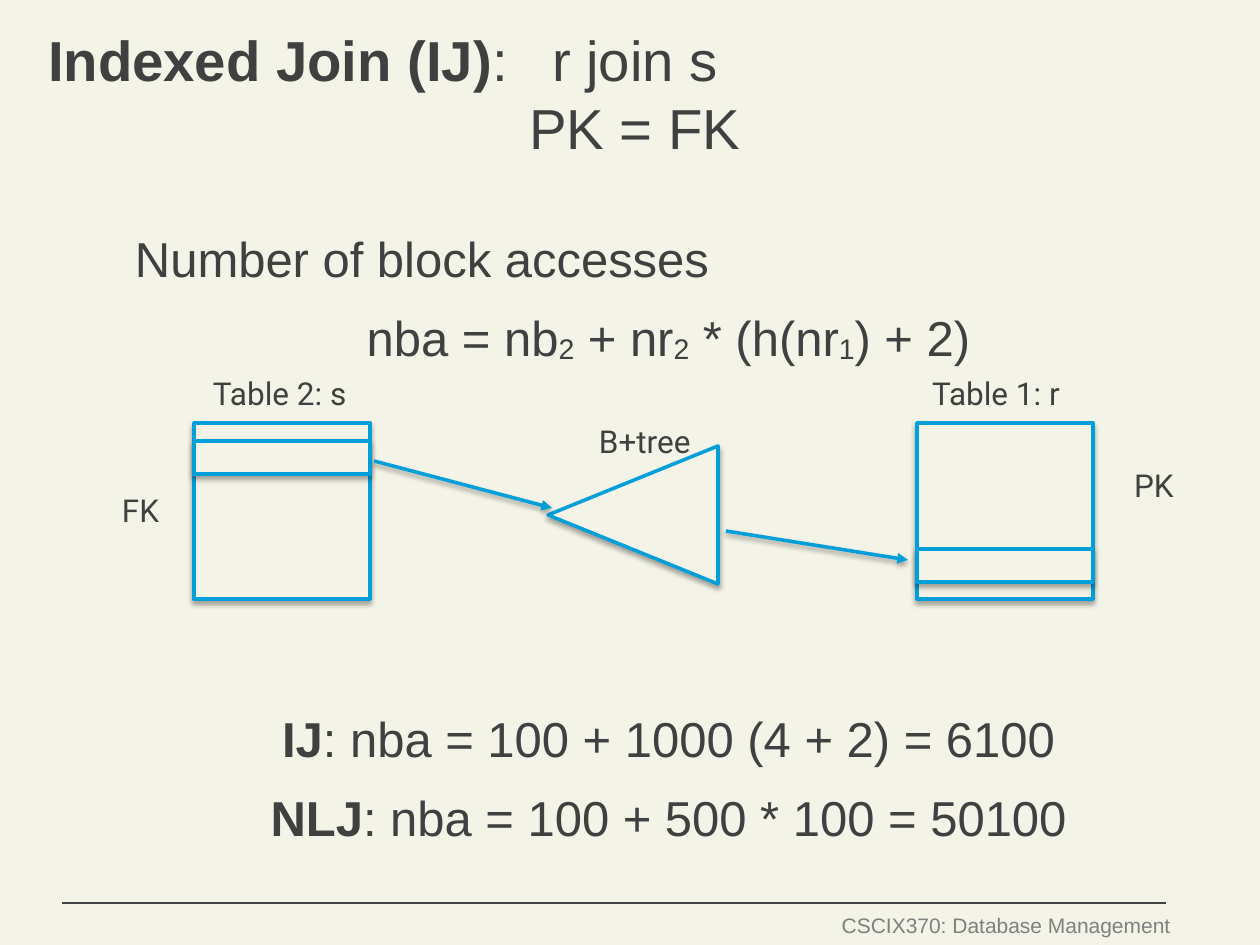
"""Build the indexed join slide with its block access diagram."""
from lxml import etree
from pptx import Presentation, util as u
from pptx.dml.color import RGBColor
from pptx.enum import shapes, text
from pptx.oxml import parse_xml
from pptx.oxml.ns import nsdecls, qn

PX = 914400 // 126
CREAM = RGBColor(0xF3, 0xF3, 0xE7)
INK = RGBColor(0x40, 0x40, 0x40)
GREY = RGBColor(0x80, 0x80, 0x80)
BLUE = RGBColor(0x00, 0x9F, 0xDA)

TITLE = {
    "place": (42, 18, 1176, 141), "size": 32.2, "line": 39,
    "paras": [
        {"runs": [("Indexed Join (IJ)", "bold"), (":\tr join s", "")], "tab": 503},
        {"runs": [("PK = FK", "")], "indent": 481},
    ],
}
BODY = {
    "place": (129, 224, 1079, 624), "size": 28, "line": 33,
    "paras": [
        {"runs": [("Number of block accesses", "")]},
        {"runs": [("nba = nb", ""), ("2", "sub"), (" + nr", ""), ("2", "sub"),
                  (" * (h(nr", ""), ("1", "sub"), (") + 2)", "")],
         "center": True, "before": 12},
        {"runs": [("IJ", "bold"), (": nba = 100 + 1000 (4 + 2) = 6100", "")],
         "center": True, "before": 196},
        {"runs": [("NLJ", "bold"), (": nba = 100 + 500 * 100 = 50100", "")],
         "center": True, "before": 12},
    ],
}
TABLE_SIDE, ROW_HEIGHT, TABLE_TOP = 176, 33, 423
TABLES = [(194, 441), (917, 549)]
TREE = [(548, 515), (718, 584), (718, 446)]
ARROWS = [(374, 461, 552, 508), (726, 531, 908, 560)]
LABELS = [
    ("B+tree", 593, 416, 108),
    ("Table 1: r", 926, 368, 144),
    ("Table 2: s", 207, 368, 149),
    ("PK", 1128, 460, 57),
    ("FK", 116, 485, 54),
]
FOOTER = ("CSCIX370: Database Management", 833, 907, 344)
RULE = (62, 903, 1166, 903)


def px(*lengths):
    return [length * PX for length in lengths]


def set_frame(frame, wrap):
    frame.word_wrap = wrap
    frame.auto_size = text.MSO_AUTO_SIZE.NONE
    frame.vertical_anchor = text.MSO_ANCHOR.TOP
    frame.margin_left = frame.margin_right = 6 * PX
    frame.margin_top = frame.margin_bottom = 6 * PX


def set_font(span, size, name="Arial", colour=INK):
    span.font.size = u.Pt(size)
    span.font.name = name
    span.font.color.rgb = colour


def fill_placeholder(holder, content):
    holder.left, holder.top, holder.width, holder.height = px(*content["place"])
    frame = holder.text_frame
    set_frame(frame, True)
    for index, item in enumerate(content["paras"]):
        para = frame.add_paragraph() if index else frame.paragraphs[0]
        centered = item.get("center")
        para.alignment = text.PP_ALIGN.CENTER if centered else text.PP_ALIGN.LEFT
        para.line_spacing = u.Pt(content["line"])
        para.space_before = u.Pt(item.get("before", 0))
        props = para._p.get_or_add_pPr()
        props.set("marL", str(item.get("indent", 0) * PX))
        props.set("indent", "0")
        etree.SubElement(props, qn("a:buNone"))
        if "tab" in item:
            tabs = etree.SubElement(props, qn("a:tabLst"))
            etree.SubElement(tabs, qn("a:tab"), pos=str(item["tab"] * PX), algn="l")
        for words, style in item["runs"]:
            span = para.add_run()
            span.text = words
            set_font(span, content["size"])
            span.font.bold = style == "bold"
            if style == "sub":
                span.font._element.set("baseline", "-6000")


def add_label(page, words, left, top, width, height=52, size=18, name="Roboto",
              colour=INK, align=text.PP_ALIGN.LEFT):
    box = page.shapes.add_textbox(*px(left, top, width, height))
    set_frame(box.text_frame, False)
    para = box.text_frame.paragraphs[0]
    para.text = words
    para.alignment = align
    set_font(para.runs[0], size, name, colour)


def outline(shape):
    shape.line.color.rgb = BLUE
    shape.line.width = u.Pt(2)
    shape._element.spPr.append(parse_xml(
        f'<a:effectLst {nsdecls("a")}><a:outerShdw blurRad="38100" dist="22860" '
        'dir="5400000" rotWithShape="0"><a:srgbClr val="000000">'
        '<a:alpha val="35000"/></a:srgbClr></a:outerShdw></a:effectLst>'))


def fill_outline(shape):
    shape.fill.solid()
    shape.fill.fore_color.rgb = CREAM
    outline(shape)


def add_line(page, ends):
    return page.shapes.add_connector(shapes.MSO_CONNECTOR.STRAIGHT, *px(*ends))


def main():
    deck = Presentation()
    deck.slide_width, deck.slide_height = px(1260, 945)
    page = deck.slides.add_slide(deck.slide_layouts[1])
    page.background.fill.solid()
    page.background.fill.fore_color.rgb = CREAM

    fill_placeholder(page.shapes.title, TITLE)
    fill_placeholder(page.placeholders[1], BODY)

    rule = add_line(page, RULE)
    rule.line.color.rgb = INK
    rule.line.width = u.Pt(0.75)
    etree.SubElement(rule._element.spPr, qn("a:effectLst"))
    add_label(page, *FOOTER, height=37, size=12, name="Arial", colour=GREY,
              align=text.PP_ALIGN.RIGHT)

    for left, row_top in TABLES:
        for top, height in ((TABLE_TOP, TABLE_SIDE), (row_top, ROW_HEIGHT)):
            fill_outline(page.shapes.add_shape(
                shapes.MSO_SHAPE.RECTANGLE, *px(left, top, TABLE_SIDE, height)))

    builder = page.shapes.build_freeform(*TREE[0], scale=PX)
    builder.add_line_segments(TREE[1:], close=True)
    fill_outline(builder.convert_to_shape())

    for ends in ARROWS:
        arrow = add_line(page, ends)
        outline(arrow)
        etree.SubElement(arrow.line._get_or_add_ln(), qn("a:tailEnd"), type="triangle")

    for label in LABELS:
        add_label(page, *label)

    deck.save("out.pptx")


if __name__ == "__main__":
    main()
